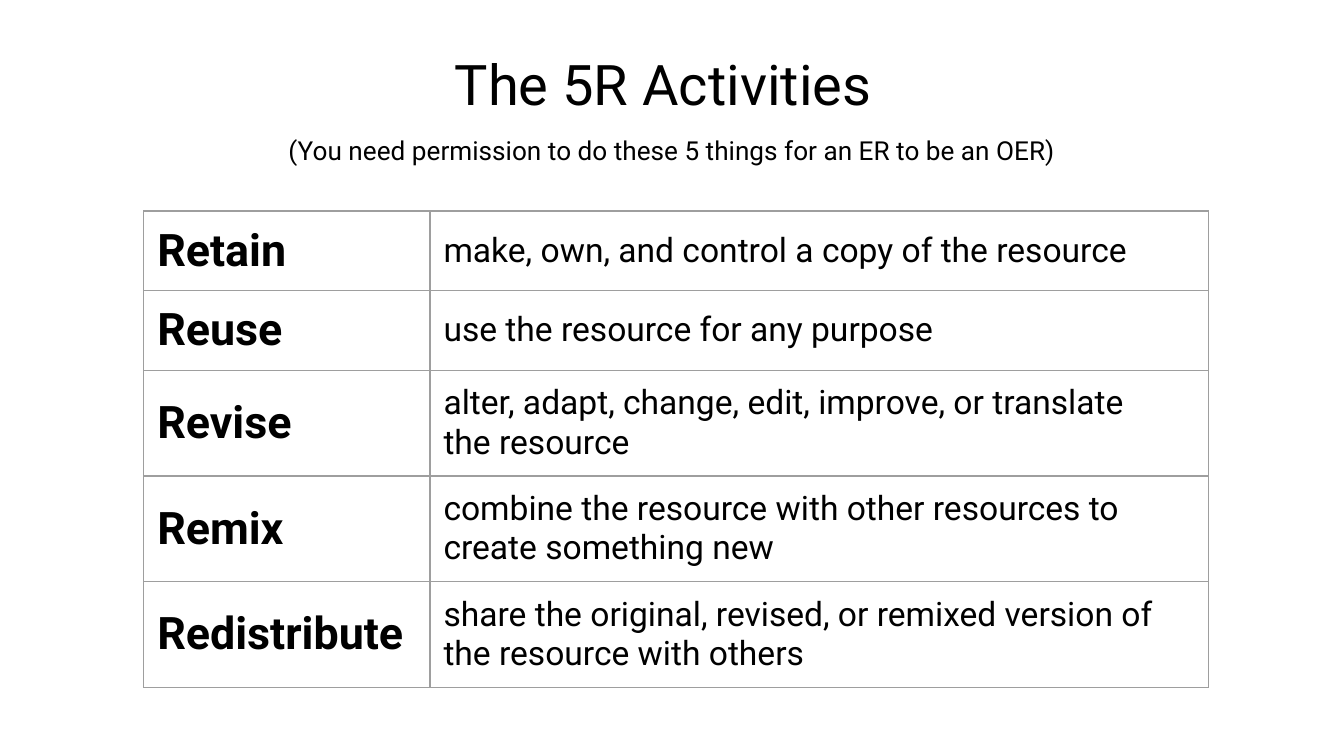
from lxml.etree import SubElement
from pptx import Presentation
from pptx.dml.color import RGBColor as RGB
from pptx.enum.text import MSO_ANCHOR as Anchor, PP_ALIGN as Align
from pptx.oxml.ns import qn
from pptx.util import Inches, Pt

HUES = {"ink": "000000", "rule": "9E9E9E"}
PAD = {f"margin_{side}": Inches(0.1) for side in ("left", "top", "right", "bottom")}

deck = Presentation()
deck.slide_width = Inches(10)
deck.slide_height = Inches(10 * 9 / 16)
slide = deck.slides.add_slide(deck.slide_layouts[6])


def write(par, text, size, bold=False):
    par.text = text
    look = {"name": "Roboto", "size": Pt(size), "bold": bold}
    for run in par.runs:
        for key, val in look.items():
            setattr(run.font, key, val)
        run.font.color.rgb = RGB.from_string(HUES["ink"])


def rule(cell):
    """Draw a thin line on all four sides of a cell."""
    props = cell._tc.get_or_add_tcPr()
    for side in "LRTB":
        line = SubElement(props, qn(f"a:ln{side}"), w=str(Pt(0.75)))
        fill = SubElement(line, qn("a:solidFill"))
        SubElement(fill, qn("a:srgbClr"), val=HUES["rule"])


# Table of activities; rows grow to fit their text
rows = [
    ("Retain", "make, own, and control a copy of the resource"),
    ("Reuse", "use the resource for any purpose"),
    ("Revise", "alter, adapt, change, edit, improve, or translate\nthe resource"),
    ("Remix", "combine the resource with other resources to create something new"),
    ("Redistribute", "share the original, revised, or remixed version of the resource with others"),
]
widths = [2.13, 5.79]
high = 0.42
table = slide.shapes.add_table(
    len(rows), len(widths), Inches(1.07), Inches(1.57),
    Inches(sum(widths)), Inches(high * len(rows))).table
table.first_row = table.horz_banding = False
for col, width in zip(table.columns, widths):
    col.width = Inches(width)

for r, row in enumerate(rows):
    table.rows[r].height = Inches(high)
    for c, text in enumerate(row):
        cell = table.cell(r, c)
        for key, val in PAD.items():
            setattr(cell, key, val)
        cell.vertical_anchor = Anchor.MIDDLE
        rule(cell)
        cell.fill.background()
        write(cell.text_frame.paragraphs[0], text, 18 if c else 24, c == 0)

# Title and subtitle
heads = [
    ("The 5R Activities", 30, (2.35, 0.27, 5.17, 0.63)),
    ("(You need permission to do these 5 things for an ER to be an OER)", 14,
     (1.96, 0.9, 6.08, 0.47)),
]
for text, size, place in heads:
    frame = slide.shapes.add_textbox(*map(Inches, place)).text_frame
    for key, val in PAD.items():
        setattr(frame, key, val)
    frame.word_wrap = True
    par = frame.paragraphs[0]
    par.alignment = Align.CENTER
    write(par, text, size)

deck.save("out.pptx")
